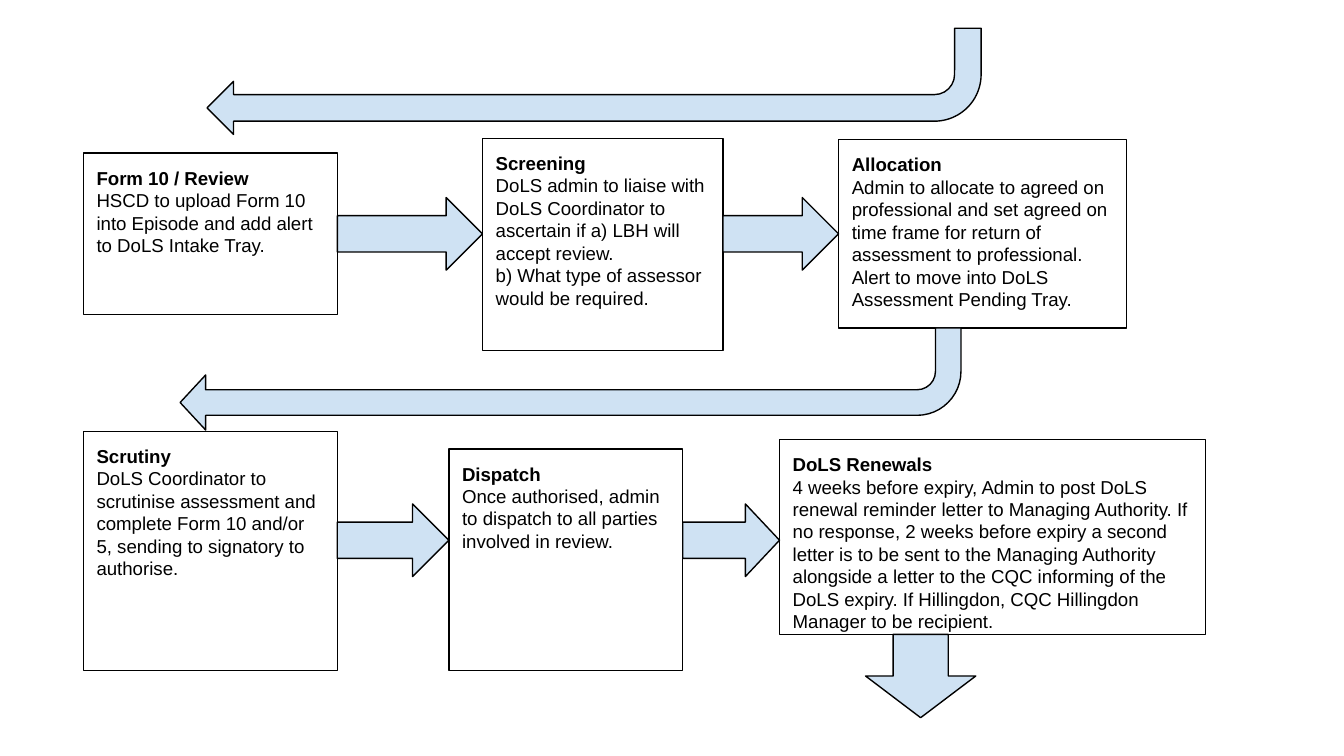
from dataclasses import dataclass

from pptx import Presentation
from pptx.dml.color import RGBColor as Rgb
from pptx.enum.shapes import MSO_SHAPE as Kind
from pptx.enum.text import MSO_ANCHOR as Anchor, PP_ALIGN as Align
from pptx.util import Inches, Pt

HUES = {"ink": "000000", "arrow": "CFE2F3"}


@dataclass
class Step:
    left: float
    top: float
    width: float
    height: float
    title: str
    body: list[str]
    head: float = 0.5


@dataclass
class Arrow:
    kind: Kind
    left: float
    top: float
    width: float
    height: float
    bends: tuple[float, ...] = (0.5, 0.5)
    turn: int = 0


def hue(name: str) -> Rgb:
    return Rgb.from_string(HUES[name])


def add_base(slide, kind: Kind, item: Step | Arrow):
    shape = slide.shapes.add_shape(
        kind, *map(Inches, (item.left, item.top, item.width, item.height))
    )
    shape.shadow.inherit = False
    shape.line.color.rgb = hue("ink")
    shape.line.width = Pt(0.75)
    return shape


def draw_step(slide, step: Step) -> None:
    shape = add_base(slide, Kind.RECTANGLE, step)
    shape.fill.background()
    frame = shape.text_frame
    frame.word_wrap = True
    frame.vertical_anchor = Anchor.TOP
    frame.margin_left = frame.margin_right = Inches(0.1)
    frame.margin_top = frame.margin_bottom = Inches(0.1)
    frame.text = "\n".join([step.title, *step.body])
    for row, para in enumerate(frame.paragraphs):
        para.alignment = Align.LEFT
        for run in para.runs:
            run.font.name = "Arial"
            run.font.size = Pt(10)
            run.font.bold = row == 0
            run.font.color.rgb = hue("ink")


def draw_arrow(slide, arrow: Arrow) -> None:
    shape = add_base(slide, arrow.kind, arrow)
    shape.fill.solid()
    shape.fill.fore_color.rgb = hue("arrow")
    shape.rotation = arrow.turn
    for spot, bend in enumerate(arrow.bends):
        shape.adjustments[spot] = bend


def link(start: Step, end: Step, top: float) -> Arrow:
    left = start.left + start.width
    width = end.left - left
    return Arrow(Kind.RIGHT_ARROW, left, top, width, 0.54, (0.5, end.head))


ROWS = [
    (1.47, [
        Step(0.62, 1.14, 1.89, 1.2, "Form 10 / Review", [
            "HSCD to upload Form 10 into Episode and add alert to DoLS Intake Tray.",
        ]),
        Step(3.59, 1.03, 1.79, 1.58, "Screening", [
            "DoLS admin to liaise with DoLS Coordinator to ascertain if a) LBH "
            "will accept review.",
            "b) What type of assessor would be required.",
        ]),
        Step(6.24, 1.04, 2.14, 1.4, "Allocation", [
            "Admin to allocate to agreed on professional and set agreed on time "
            "frame for return of assessment to professional. Alert to move into "
            "DoLS Assessment Pending Tray.",
        ]),
    ]),
    (3.75, [
        Step(0.62, 3.21, 1.89, 1.78, "Scrutiny", [
            "DoLS Coordinator to scrutinise assessment and complete Form 10 "
            "and/or 5, sending to signatory to authorise.",
        ]),
        Step(3.34, 3.34, 1.74, 1.65, "Dispatch", [
            "Once authorised, admin to dispatch to all parties involved in review.",
        ]),
        Step(5.8, 3.27, 3.17, 1.45, "DoLS Renewals", [
            "4 weeks before expiry, Admin to post DoLS renewal reminder letter "
            "to Managing Authority. If no response, 2 weeks before expiry a "
            "second letter is to be sent to the Managing Authority alongside a "
            "letter to the CQC informing of the DoLS expiry. If Hillingdon, CQC "
            "Hillingdon Manager to be recipient.",
        ], 0.47),
    ]),
]

TURNS = [
    Arrow(Kind.BENT_ARROW, 1.54, 0.21, 5.76, 0.79, (0.25, 0.25, 0.25, 0.44), 180),
    Arrow(Kind.BENT_ARROW, 1.34, 2.44, 5.81, 0.76, (0.25, 0.27, 0.25, 0.43), 180),
    Arrow(Kind.DOWN_ARROW, 6.44, 4.72, 0.82, 0.62),
]


def main() -> None:
    deck = Presentation()
    deck.slide_width = Inches(10)
    deck.slide_height = Inches(10) * 9 // 16
    slide = deck.slides.add_slide(deck.slide_layouts[6])
    for top, steps in ROWS:
        for step in steps:
            draw_step(slide, step)
        for start, end in zip(steps, steps[1:]):
            draw_arrow(slide, link(start, end, top))
    for arrow in TURNS:
        draw_arrow(slide, arrow)
    deck.save("out.pptx")


if __name__ == "__main__":
    main()
